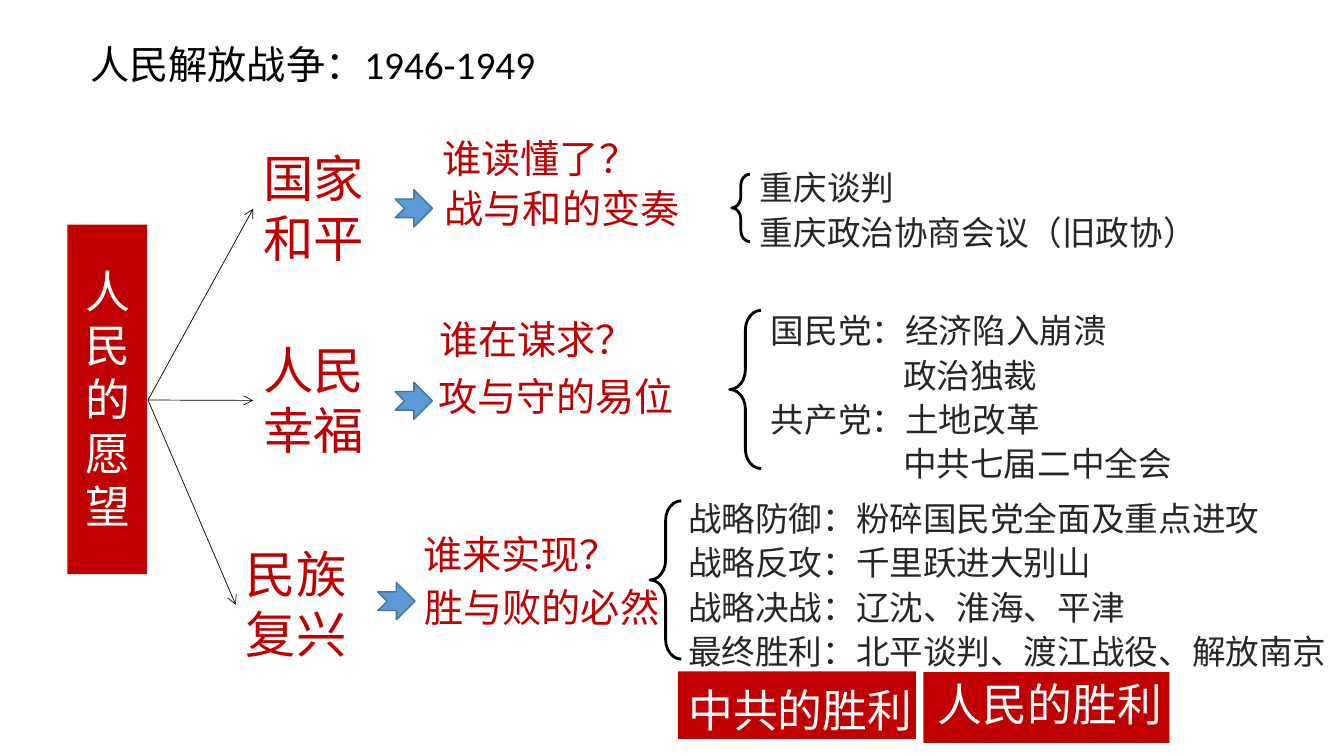
from dataclasses import dataclass
from lxml.etree import SubElement
from pptx import Presentation
from pptx.dml.color import RGBColor as RGB
from pptx.enum.shapes import MSO_CONNECTOR as Link, MSO_SHAPE as Kind
from pptx.enum.text import MSO_AUTO_SIZE as Fit, PP_ALIGN as Align
from pptx.oxml.ns import qn
from pptx.util import Cm, Pt


@dataclass(frozen=True)
class Theme:
    red: str = "C00000"
    white: str = "FFFFFF"
    black: str = "000000"
    gray: str = "262626"
    blue: str = "5B9BD5"
    navy: str = "43739E"
    latin: str = "Calibri"
    han: str = "Noto Sans CJK SC"
    goal: int = 36
    label: int = 32
    body: int = 28
    note: int = 24


class Board:
    def __init__(self, slide, theme):
        self.shapes = slide.shapes
        self.theme = theme

    def text(self, box, lines, size, color, font=None, align=Align.CENTER,
             wrap=False, space=None, inset=None, home=None):
        """Add one paragraph per line; lines starting with a tab get the inset."""
        area = (home or self.shapes).add_textbox(*map(Cm, box))
        frame = area.text_frame
        frame.word_wrap = wrap
        frame.auto_size = Fit.SHAPE_TO_FIT_TEXT
        for i, line in enumerate(lines):
            para = frame.paragraphs[0] if i == 0 else frame.add_paragraph()
            para.text = line.lstrip("\t")
            para.alignment = align
            if space:
                para.line_spacing = space
            para.font.size = Pt(size)
            para.font.color.rgb = RGB.from_string(color)
            para.font.name = font or self.theme.latin
            props = para._p.get_or_add_pPr()
            SubElement(props.find(qn("a:defRPr")), qn("a:ea"),
                       typeface=self.theme.han)
            if line.startswith("\t"):
                props.set("marL", str(Cm(inset)))
                props.set("indent", "0")

    def shape(self, kind, box, fill=None, line=None, width=1, home=None):
        item = (home or self.shapes).add_shape(kind, *map(Cm, box))
        item.shadow.inherit = False
        if fill:
            item.fill.solid()
            item.fill.fore_color.rgb = RGB.from_string(fill)
        else:
            item.fill.background()
        if line:
            item.line.color.rgb = RGB.from_string(line)
            item.line.width = Pt(width)
        else:
            item.line.fill.background()
        return item

    def arrow(self, start, end):
        link = self.shapes.add_connector(Link.STRAIGHT, *map(Cm, start + end))
        link.line.color.rgb = RGB.from_string(self.theme.black)
        link.line.width = Pt(0.5)
        SubElement(link.line._get_or_add_ln(), qn("a:tailEnd"), type="arrow")
        SubElement(link._element.spPr, qn("a:effectLst"))

    def brace(self, box):
        item = self.shape(Kind.LEFT_BRACE, box, line=self.theme.black, width=2)
        item.adjustments[0] = 0.627

    def label(self, box, area, words, home=None):
        """Add a red block with white words over it."""
        look = self.theme
        self.shape(Kind.RECTANGLE, box, look.red, home=home)
        self.text(area, [words], look.label, look.white, wrap=True, home=home)

    def banner(self, box, area, words):
        self.label(box, area, words, self.shapes.add_group_shape().shapes)

    def goal(self, left, top, words, notch, ask, reply):
        """Add one wish with its arrows, question and answer."""
        look = self.theme
        self.text((left, top, 3.05, 3.33), words, look.goal, look.red)
        self.shape(Kind.NOTCHED_RIGHT_ARROW, (left + 3.58, notch, 0.94, 0.94),
                   look.blue, look.navy)
        for (x, y, line), wide in ((ask, 5.44), (reply, 6.43)):
            self.text((x, y, wide, 1.45), [line], look.body, look.red)
        self.arrow(ROOT, (left, top + 1.68))

    def notes(self, box, brace, lines, wrap=False):
        look = self.theme
        self.text(box, lines, look.note, look.gray, look.han, Align.LEFT,
                  wrap, 1.1, 3.33)
        self.brace(brace)


ROOT = (3.73, 10.08)
GOALS = [
    (6.38, 3.58, ["国家", "和平"], 4.78,
     (10.9, 3.25, "谁读懂了？"), (10.95, 4.52, "战与和的变奏")),
    (6.38, 8.41, ["人民", "幸福"], 9.63,
     (10.82, 7.82, "谁在谋求？"), (10.8, 9.25, "攻与守的易位")),
    (5.94, 13.56, ["民族", "复兴"], 14.68,
     (10.41, 13.23, "谁来实现？"), (10.44, 14.58, "胜与败的必然")),
]
NOTES = [
    ((18.9, 3.99, 11.51, 2.51), (18.44, 4.39, 0.46, 1.7),
     ["重庆谈判", "重庆政治协商会议（旧政协）"]),
    ((19.18, 7.59, 10.82, 4.78), (18.39, 7.82, 0.79, 3.99),
     ["国民党：经济陷入崩溃", "\t政治独裁",
      "共产党：土地改革", "\t中共七届二中全会"]),
    ((17.09, 12.32, 17.09, 4.78), (16.38, 12.62, 0.79, 3.99),
     ["战略防御：粉碎国民党全面及重点进攻", "战略反攻：千里跃进大别山",
      "战略决战：辽沈、淮海、平津",
      "最终胜利：北平谈判、渡江战役、解放南京"], True),
]


def main():
    deck = Presentation()
    deck.slide_width, deck.slide_height = Cm(33.87), Cm(19.05)
    look = Theme()
    board = Board(deck.slides.add_slide(deck.slide_layouts[6]), look)
    board.text((2.03, 0.89, 11.73, 1.45), ["人民解放战争：1946-1949"],
               look.body, look.black, align=Align.LEFT, wrap=True)
    board.label((1.7, 5.66, 2.01, 8.81), (1.68, 6.53, 2.06, 7.09), "人民的愿望")
    for goal in GOALS:
        board.goal(*goal)
    for note in NOTES:
        board.notes(*note)
    board.banner((23.27, 16.94, 6.2, 1.78), (23.27, 16.92, 6.38, 1.63),
                 "人民的胜利")
    board.banner((17.09, 16.92, 5.99, 1.7), (17.09, 17.07, 6.17, 1.63),
                 "中共的胜利")
    deck.save("out.pptx")


if __name__ == "__main__":
    main()
